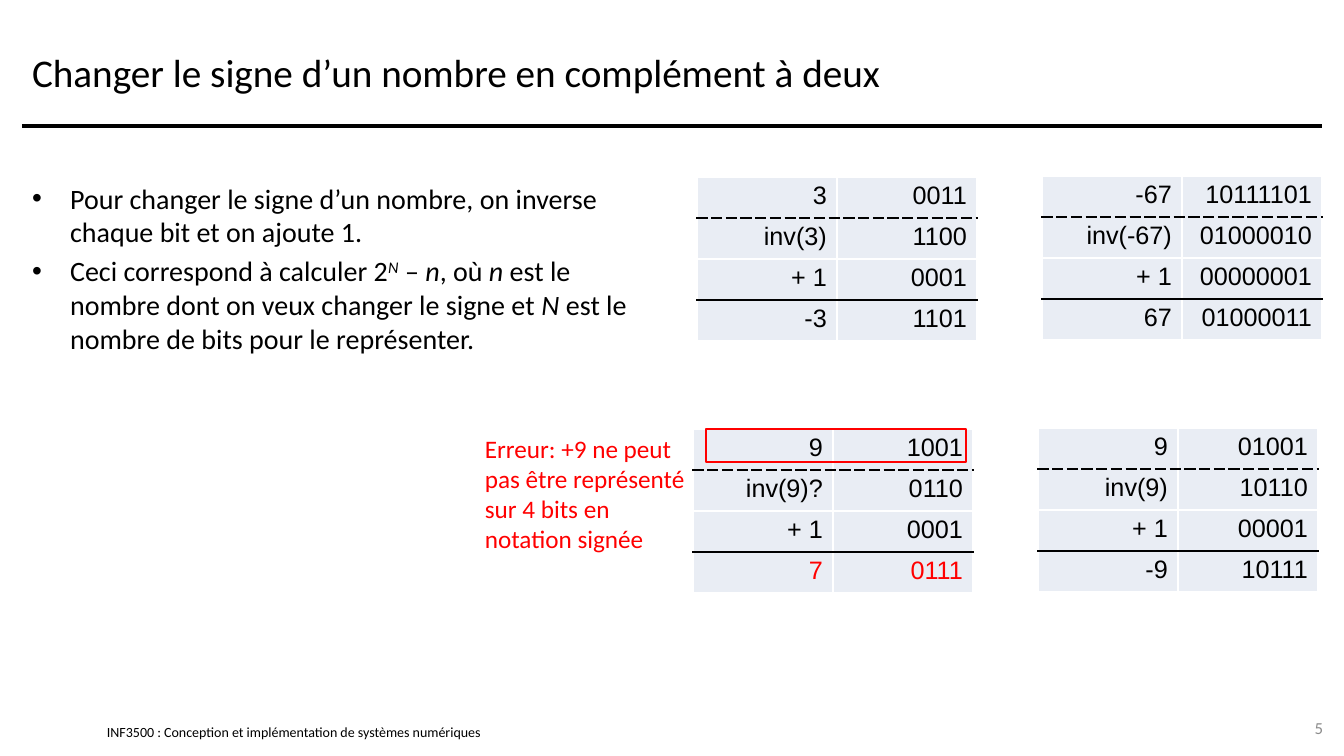
from dataclasses import dataclass

from lxml.etree import SubElement
from pptx import Presentation
from pptx.dml.color import RGBColor as Rgb
from pptx.enum.shapes import MSO_CONNECTOR as Connector, MSO_SHAPE as Shape
from pptx.enum.text import MSO_ANCHOR as Anchor, MSO_AUTO_SIZE as AutoSize, PP_ALIGN as Align
from pptx.oxml.ns import qn
from pptx.util import Pt

PX = 914400 / 100.8


@dataclass(frozen=True)
class Theme:
    ink: str = "000000"
    error: str = "FF0000"
    muted: str = "8C8C8C"
    cell: str = "E9EDF4"
    grid: str = "FFFFFF"
    text_font: str = "Calibri"
    table_font: str = "Arial"
    title_size: int = 28
    body_size: int = 20
    note_size: int = 18
    number_size: int = 12
    footer_size: int = 10


def px(*lengths):
    """Turn pixel lengths into EMU."""
    return [round(length * PX) for length in lengths]


def write(paragraph, text, *, size, color, font, italic=False, raised=False, align=Align.LEFT):
    """Append one formatted run to a paragraph."""
    paragraph.alignment = align
    run = paragraph.add_run()
    run.text = text
    run.font.size = Pt(size)
    run.font.name = font
    run.font.italic = italic
    run.font.color.rgb = Rgb.from_string(color)
    if raised:
        run.font._element.set("baseline", "30000")


def add_border(cell, side, color, dash="solid"):
    edge = SubElement(cell._tc.get_or_add_tcPr(), qn(f"a:ln{side}"), w=str(Pt(1)))
    fill = SubElement(edge, qn("a:solidFill"))
    SubElement(fill, qn("a:srgbClr"), val=color)
    SubElement(edge, qn("a:prstDash"), val=dash)


class SlideBuilder:
    def __init__(self, slide, theme):
        self.slide = slide
        self.theme = theme

    def place(self, holder, box):
        holder.left, holder.top, holder.width, holder.height = px(*box)
        holder.text_frame.auto_size = AutoSize.NONE
        return holder.text_frame

    def title(self, text, box):
        frame = self.place(self.slide.shapes.title, box)
        frame.vertical_anchor = Anchor.MIDDLE
        write(frame.paragraphs[0], text, size=self.theme.title_size,
              color=self.theme.ink, font=self.theme.text_font)

    def bullets(self, items, box, indent=38):
        """Fill the body; each item is a list of (text, format) pairs."""
        frame = self.place(self.slide.placeholders[1], box)
        margin, = px(indent)
        for index, pieces in enumerate(items):
            paragraph = frame.add_paragraph() if index else frame.paragraphs[0]
            properties = paragraph._p.get_or_add_pPr()
            properties.set("marL", str(margin))
            properties.set("indent", str(-margin))
            SubElement(properties, qn("a:buFont"), typeface=self.theme.table_font)
            SubElement(properties, qn("a:buChar"), char="•")
            paragraph.space_before = Pt(4 if index else 0)
            for text, style in pieces:
                write(paragraph, text, size=self.theme.body_size,
                      color=self.theme.ink, font=self.theme.text_font, **style)

    def label(self, text, box, *, size, color, anchor=Anchor.TOP, align=Align.LEFT, inset=True):
        frame = self.slide.shapes.add_textbox(*px(*box)).text_frame
        frame.word_wrap = True
        frame.vertical_anchor = anchor
        if not inset:
            frame.margin_left = frame.margin_right = frame.margin_top = frame.margin_bottom = 0
        write(frame.paragraphs[0], text, size=size, color=color,
              font=self.theme.text_font, align=align)

    def rule(self, start, end):
        line = self.slide.shapes.add_connector(Connector.STRAIGHT, *px(*start, *end))
        line.line.color.rgb = Rgb.from_string(self.theme.ink)
        line.line.width = Pt(3)
        SubElement(line._element.spPr, qn("a:effectLst"))

    def outline(self, box):
        frame = self.slide.shapes.add_shape(Shape.RECTANGLE, *px(*box))
        frame.shadow.inherit = False
        frame.fill.background()
        frame.line.color.rgb = Rgb.from_string(self.theme.error)
        frame.line.width = Pt(2)

    def calculation(self, rows, corner, result_color):
        """Draw a sum: dashed rule under the number, solid rule above the result."""
        theme = self.theme
        size = (280, 41 * len(rows))
        table = self.slide.shapes.add_table(len(rows), 2, *px(*corner, *size)).table
        table.first_row = table.horz_banding = False
        last = len(rows) - 1
        inner = [(theme.ink, "lgDash"), (theme.grid, "solid"), (theme.ink, "solid")]
        rules = [(theme.grid, "solid"), *inner, (theme.grid, "solid")]
        for row, values in enumerate(rows):
            for column, value in enumerate(values):
                cell = table.cell(row, column)
                add_border(cell, "L", theme.grid)
                add_border(cell, "R", theme.grid)
                add_border(cell, "T", *rules[row])
                add_border(cell, "B", *rules[row + 1])
                cell.fill.solid()
                cell.fill.fore_color.rgb = Rgb.from_string(theme.cell)
                write(cell.text_frame.paragraphs[0], value, size=theme.note_size,
                      color=result_color if row == last else theme.ink,
                      font=theme.table_font, align=Align.RIGHT)


def main():
    deck = Presentation()
    deck.slide_width, deck.slide_height = px(1344, 756)
    theme = Theme()
    page = SlideBuilder(deck.slides.add_slide(deck.slide_layouts[1]), theme)

    page.label("INF3500 : Conception et implémentation de systèmes numériques",
               (107, 723, 515, 17), size=theme.footer_size, color=theme.ink,
               anchor=Anchor.MIDDLE, inset=False)
    page.rule((22, 126), (1322, 126))
    page.title("Changer le signe d’un nombre en complément à deux", (22, 17, 1300, 109))

    plain, variable = {}, {"italic": True}
    page.bullets([
        [("Pour changer le signe d’un nombre, on inverse chaque bit et on ajoute 1.", plain)],
        [("Ceci correspond à calculer 2", plain),
         ("N", {"italic": True, "raised": True}),
         (" – ", plain),
         ("n", variable),
         (", où ", plain),
         ("n", variable),
         (" est le nombre dont on veux changer le signe et ", plain),
         ("N", variable),
         (" est le nombre de bits pour le représenter.", plain)],
    ], (22, 176, 638, 512))
    page.label("5", (1266, 708, 67, 40), size=theme.number_size, color=theme.muted,
               anchor=Anchor.MIDDLE, align=Align.RIGHT)

    calculations = [
        ((697, 177), theme.ink,
         [("3", "0011"), ("inv(3)", "1100"), ("+ 1", "0001"), ("-3", "1101")]),
        ((1042, 176), theme.ink,
         [("-67", "10111101"), ("inv(-67)", "01000010"), ("+ 1", "00000001"), ("67", "01000011")]),
        ((693, 429), theme.error,
         [("9", "1001"), ("inv(9)?", "0110"), ("+ 1", "0001"), ("7", "0111")]),
        ((1038, 428), theme.ink,
         [("9", "01001"), ("inv(9)", "10110"), ("+ 1", "00001"), ("-9", "10111")]),
    ]
    for corner, result_color, rows in calculations:
        page.calculation(rows, corner, result_color)

    page.outline((706, 429, 260, 33))
    page.label("Erreur: +9 ne peut pas être représenté sur 4 bits en notation signée",
               (475, 428, 227, 132), size=theme.note_size, color=theme.error)

    deck.save("out.pptx")


if __name__ == "__main__":
    main()
